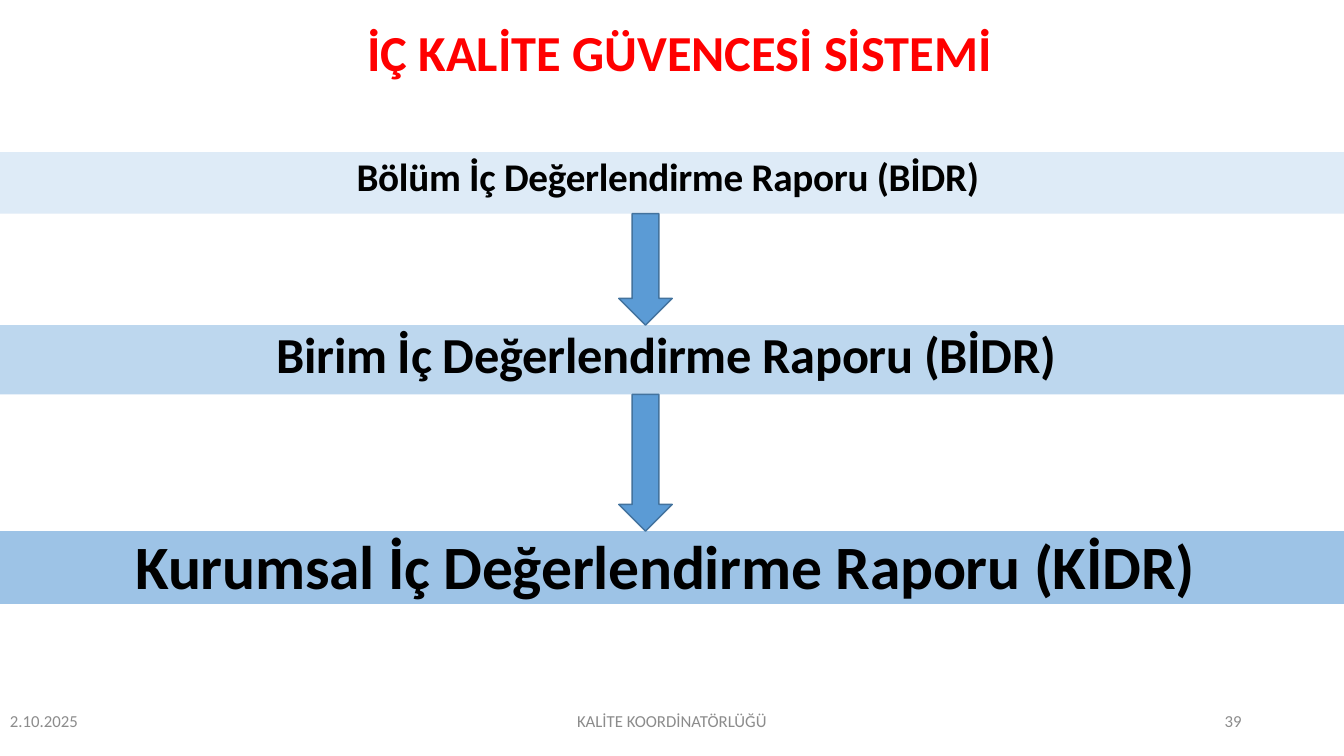
from itertools import pairwise

from pptx import Presentation
from pptx.dml.color import RGBColor
from pptx.enum.shapes import MSO_SHAPE
from pptx.enum.text import MSO_ANCHOR, PP_ALIGN
from pptx.util import Pt

LEFT, CENTER, RIGHT = PP_ALIGN.LEFT, PP_ALIGN.CENTER, PP_ALIGN.RIGHT
TOP, MIDDLE = MSO_ANCHOR.TOP, MSO_ANCHOR.MIDDLE
RECTANGLE, DOWN_ARROW = MSO_SHAPE.RECTANGLE, MSO_SHAPE.DOWN_ARROW

RED = RGBColor(0xFF, 0x00, 0x00)
BLACK = RGBColor(0x00, 0x00, 0x00)
GRAY = RGBColor(0x8C, 0x8C, 0x8C)
PALE_BLUE = RGBColor(0xDE, 0xEB, 0xF7)
LIGHT_BLUE = RGBColor(0xBD, 0xD7, 0xEE)
MEDIUM_BLUE = RGBColor(0x9D, 0xC3, 0xE6)
ARROW_BLUE = RGBColor(0x5B, 0x9B, 0xD5)
ARROW_EDGE = RGBColor(0x43, 0x73, 0x9E)

SLIDE_WIDTH, SLIDE_HEIGHT = 960, 540
ARROW_LEFT, ARROW_WIDTH = 442, 38.2
FOOTER_TOP, FOOTER_HEIGHT = 500.5, 28.8

TITLE = "İÇ KALİTE GÜVENCESİ SİSTEMİ "
# text, top, height, font size, fill
REPORTS = [
    ("Bölüm İç Değerlendirme Raporu (BİDR) ", 108.7, 43.9, 28, PALE_BLUE),
    ("Birim İç Değerlendirme Raporu (BİDR) ", 232.3, 49.4, 36, LIGHT_BLUE),
    ("Kurumsal İç Değerlendirme Raporu (KİDR) ", 379.4, 51.9, 44, MEDIUM_BLUE),
]
# text, left, width, alignment
FOOTERS = [
    ("2.10.2025", 0, 216, LEFT),
    ("KALİTE KOORDİNATÖRLÜĞÜ", 318, 324, CENTER),
    ("39", 678, 216, RIGHT),
]


def write(shape, text, *, size, color, bold=False, align=CENTER,
          anchor=MIDDLE, line_spacing=1.0, tracking=0):
    """Put one formatted paragraph in a shape; tracking is in points."""
    frame = shape.text_frame
    frame.word_wrap = True
    frame.vertical_anchor = anchor
    paragraph = frame.paragraphs[0]
    paragraph.alignment = align
    paragraph.line_spacing = line_spacing
    run = paragraph.add_run()
    run.text = text
    font = run.font
    font.name, font.size, font.bold = "Calibri", Pt(size), bold
    font.color.rgb = color
    if tracking:
        run._r.get_or_add_rPr().set("spc", str(round(tracking * 100)))


def add_text(slide, text, left, top, width, height, **text_format):
    box = slide.shapes.add_textbox(Pt(left), Pt(top), Pt(width), Pt(height))
    write(box, text, **text_format)


def add_filled(slide, kind, left, top, width, height, fill, edge=None):
    shape = slide.shapes.add_shape(kind, Pt(left), Pt(top), Pt(width), Pt(height))
    shape.shadow.inherit = False
    shape.fill.solid()
    shape.fill.fore_color.rgb = fill
    if edge is None:
        shape.line.fill.background()
    else:
        shape.line.color.rgb = edge
        shape.line.width = Pt(1)
    return shape


def main():
    presentation = Presentation()
    presentation.slide_width = Pt(SLIDE_WIDTH)
    presentation.slide_height = Pt(SLIDE_HEIGHT)
    slide = presentation.slides.add_slide(presentation.slide_layouts[6])

    add_text(slide, TITLE, 80.6, 17.3, 818, 44.6,
             size=36, color=RED, bold=True, line_spacing=0.9)

    for text, top, height, size, fill in REPORTS:
        bar = add_filled(slide, RECTANGLE, 0, top, SLIDE_WIDTH, height, fill)
        write(bar, text, size=size, color=BLACK, bold=True, anchor=TOP,
              line_spacing=0.9, tracking=-0.2)

    for (_, top, height, *_), (_, next_top, *_) in pairwise(REPORTS):
        bottom = top + height
        add_filled(slide, DOWN_ARROW, ARROW_LEFT, bottom, ARROW_WIDTH,
                   next_top - bottom, ARROW_BLUE, ARROW_EDGE)

    for text, left, width, align in FOOTERS:
        add_text(slide, text, left, FOOTER_TOP, width, FOOTER_HEIGHT,
                 size=12, color=GRAY, align=align)

    presentation.save("out.pptx")


if __name__ == "__main__":
    main()
